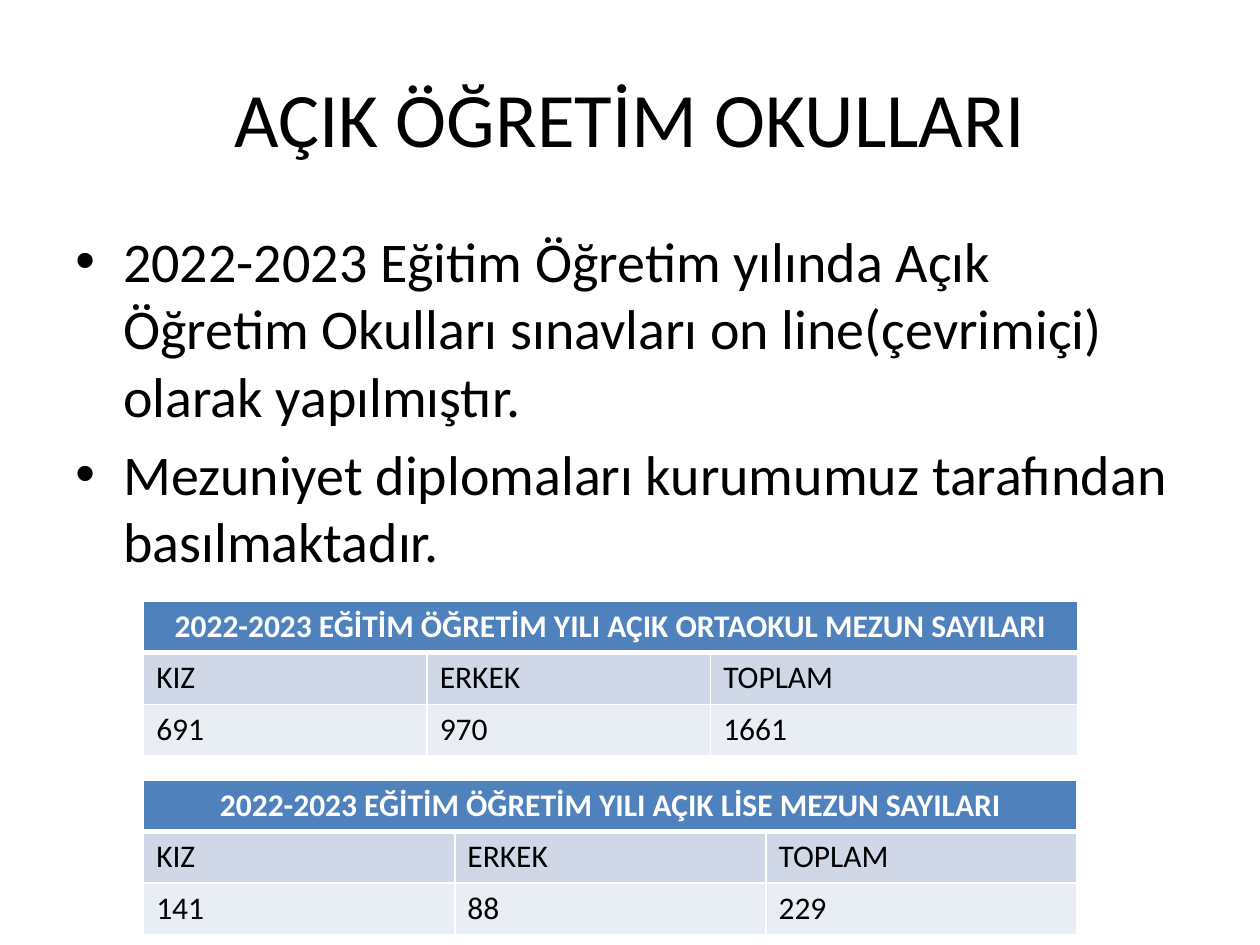
"""Build the open-education schools slide with its two graduate tables."""
from lxml.etree import SubElement
from pptx import Presentation
from pptx.dml.color import RGBColor
from pptx.enum.text import MSO_ANCHOR as Anchor, PP_ALIGN as Align
from pptx.oxml import parse_xml
from pptx.oxml.ns import nsdecls, qn
from pptx.util import Inches, Pt

COLORS = {"text": "000000", "white": "FFFFFF", "header": "4F81BD",
          "labels": "D0D8E8", "values": "E9EDF4"}
BULLETS = [
    "2022-2023 Eğitim Öğretim yılında Açık Öğretim Okulları sınavları "
    "on line(çevrimiçi) olarak yapılmıştır.",
    "Mezuniyet diplomaları kurumumuz tarafından basılmaktadır.",
]
LABELS = ["KIZ", "ERKEK", "TOPLAM"]
TABLES = [
    ("2022-2023 EĞİTİM ÖĞRETİM YILI AÇIK LİSE MEZUN SAYILARI",
     ["141", "88", "229"], 6.19, [2.47, 2.47, 2.47], Anchor.TOP),
    ("2022-2023 EĞİTİM ÖĞRETİM YILI AÇIK ORTAOKUL MEZUN SAYILARI",
     ["691", "970", "1661"], 4.77, [2.25, 2.25, 2.91], Anchor.MIDDLE),
]


def style(p, size, color="text", bold=False):
    for r in p.runs:
        r.font.name = "Calibri"
        r.font.size = Pt(size)
        r.font.bold = bold
        r.font.color.rgb = RGBColor.from_string(COLORS[color])


def set_borders(cell, row):
    widths = {"L": 1, "R": 1, "T": 3 if row == 1 else 1, "B": 3 if row == 0 else 1}
    for i, (side, width) in enumerate(widths.items()):
        line = parse_xml(
            f'<a:ln{side} {nsdecls("a")} w="{Pt(width)}"><a:solidFill>'
            f'<a:srgbClr val="{COLORS["white"]}"/></a:solidFill></a:ln{side}>')
        cell._tc.get_or_add_tcPr().insert(i, line)


prs = Presentation()
prs.slide_width, prs.slide_height = Inches(10), Inches(7.5)
s = prs.slides.add_slide(prs.slide_layouts[5])

title = s.shapes.title
title.left, title.top = Inches(0.5), Inches(0.3)
title.width, title.height = Inches(9), Inches(1.25)
title.text_frame.text = "AÇIK ÖĞRETİM OKULLARI"
title.text_frame.vertical_anchor = Anchor.MIDDLE
title.text_frame.paragraphs[0].alignment = Align.CENTER
style(title.text_frame.paragraphs[0], 44)

body = s.shapes.add_textbox(Inches(0.5), Inches(1.75), Inches(9), Inches(4.95))
tf = body.text_frame
tf.word_wrap = True
for i, text in enumerate(BULLETS):
    p = tf.add_paragraph() if i else tf.paragraphs[0]
    p.text = text
    pPr = p._p.get_or_add_pPr()
    pPr.set("marL", str(Inches(0.38)))
    pPr.set("indent", str(Inches(-0.38)))
    SubElement(pPr, qn("a:buFont")).set("typeface", "Arial")
    SubElement(pPr, qn("a:buChar")).set("char", "•")
    if i:
        p.space_before = Pt(6.4)
    style(p, 32)

for heading, values, top, widths, anchor in TABLES:
    table = s.shapes.add_table(3, 3, Inches(1.14), Inches(top),
                               Inches(7.4), Inches(1.22)).table
    for column, width in zip(table.columns, widths):
        column.width = Inches(width)
    rows = [([heading, "", ""], "header"), (LABELS, "labels"), (values, "values")]
    for i, (texts, fill) in enumerate(rows):
        table.rows[i].height = Inches(0.41)
        for j, text in enumerate(texts):
            cell = table.cell(i, j)
            cell.text = text
            cell.fill.solid()
            cell.fill.fore_color.rgb = RGBColor.from_string(COLORS[fill])
            set_borders(cell, i)
            style(cell.text_frame.paragraphs[0], 18,
                  "text" if i else "white", i == 0)
    header = table.cell(0, 0)
    header.merge(table.cell(0, 2))
    header.vertical_anchor = anchor
    header.text_frame.paragraphs[0].alignment = Align.CENTER

prs.save("out.pptx")
